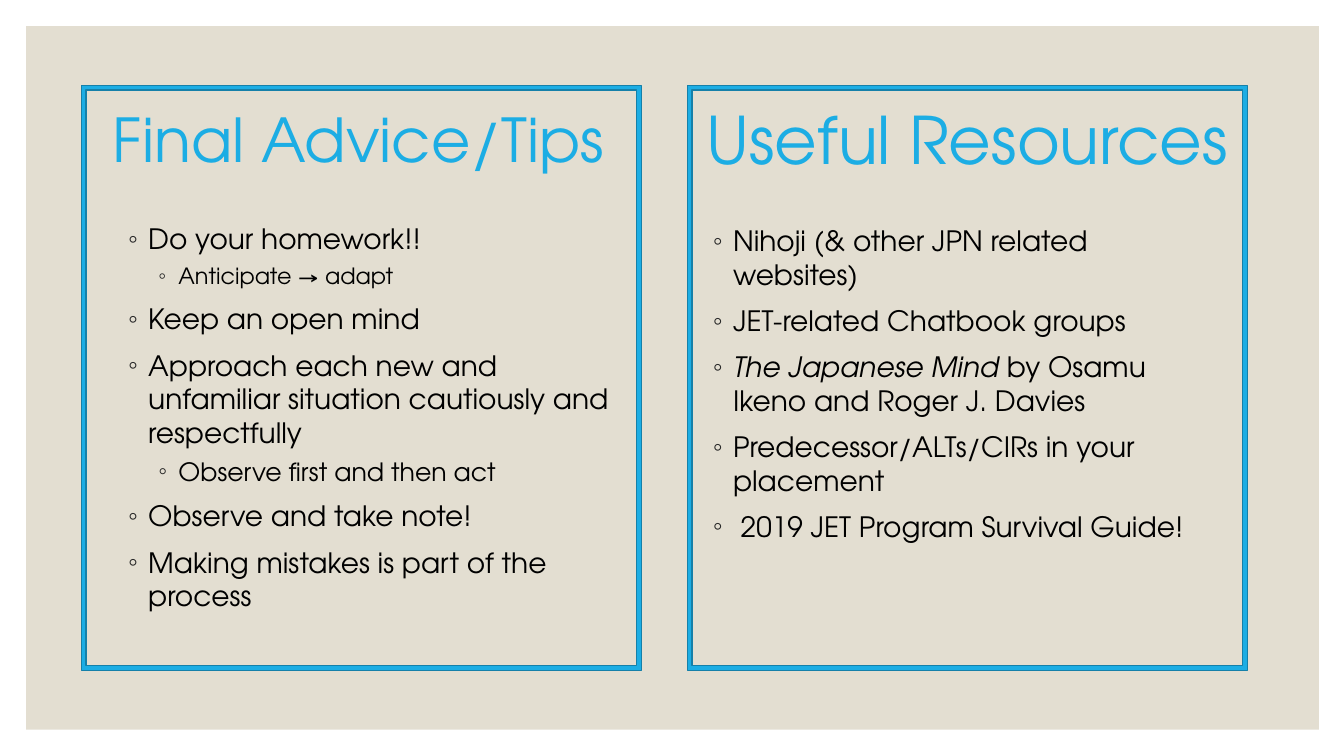
from pptx import Presentation
from pptx import util as u
from pptx.dml.color import RGBColor
from pptx.enum import shapes, text
from pptx.oxml.ns import qn
from lxml import etree

FONT = "TeX Gyre Adventor"
BLUE, EDGE, BEIGE, BLACK, BULLET = "1CADE4", "1580A9", "E3DED1", "000000", "262626"
PANEL_W, PANEL_H = 5.55, 5.8

# Each item: level, size, runs of (words, italic)
ADVICE = [
    (0, 20, [("Do your homework!!", False)]),
    (1, 16, [("Anticipate → adapt", False)]),
    (0, 20, [("Keep an open mind", False)]),
    (0, 20, [("Approach each new and unfamiliar situation cautiously and respectfully", False)]),
    (1, 18, [("Observe first and then act", False)]),
    (0, 20, [("Observe and take note!", False)]),
    (0, 20, [("Making mistakes is part of the process", False)]),
]
RESOURCES = [
    (0, 20, [("Nihoji (& other JPN related websites)", False)]),
    (0, 20, [("JET-related Chatbook groups", False)]),
    (0, 20, [("The Japanese Mind", True), (" by Osamu Ikeno and Roger J. Davies", False)]),
    (0, 20, [("Predecessor/ALTs/CIRs in your placement", False)]),
    (0, 20, [(" 2019 JET Program Survival Guide!", False)]),
]


def rgb(color):
    return RGBColor.from_string(color)


def place(sp, x, y, w, h):
    sp.left, sp.top, sp.width, sp.height = (u.Inches(v) for v in (x, y, w, h))


def style(r, size, color, italic=False):
    r.font.name, r.font.size, r.font.italic = FONT, u.Pt(size), italic
    r.font.color.rgb = rgb(color)


def add_bullet(p, level):
    pPr = p._p.get_or_add_pPr()
    pPr.set("marL", str(u.Inches(0.5 if level else 0.2)))
    pPr.set("indent", str(u.Inches(-0.2)))
    clr = etree.SubElement(pPr, qn("a:buClr"))
    etree.SubElement(clr, qn("a:srgbClr")).set("val", BULLET)
    etree.SubElement(pPr, qn("a:buChar")).set("char", "◦")


def background(s):
    s.background.fill.solid()
    s.background.fill.fore_color.rgb = rgb("FFFFFF")
    sp = s.shapes.add_shape(shapes.MSO_SHAPE.RECTANGLE, *(u.Inches(v) for v in (0.26, 0.26, 12.82, 6.98)))
    sp.shadow.inherit = False
    sp.fill.solid()
    sp.fill.fore_color.rgb = rgb(BEIGE)
    sp.line.fill.background()
    s.shapes._spTree.insert(2, sp._element)  # behind the placeholders


def heading(sp, words, size, x, y):
    place(sp, x, y, 5.5, 1.5)
    tf = sp.text_frame
    tf.word_wrap, tf.auto_size = True, text.MSO_AUTO_SIZE.NONE
    tf.vertical_anchor = text.MSO_ANCHOR.MIDDLE
    tf.text = words
    p = tf.paragraphs[0]
    p.alignment, p.line_spacing = text.PP_ALIGN.LEFT, 0.9
    style(p.runs[0], size, BLUE)


def bullet_list(sp, items, x, y):
    place(sp, x, y, 5.2, 4.1)
    tf = sp.text_frame
    tf.word_wrap, tf.auto_size = True, text.MSO_AUTO_SIZE.NONE
    tf.vertical_anchor = text.MSO_ANCHOR.TOP
    for i, (level, size, runs) in enumerate(items):
        p = tf.add_paragraph() if i else tf.paragraphs[0]
        p.level = level
        add_bullet(p, level)
        p.space_before = u.Pt(0 if i == 0 else 5 if level else 9)
        for words, italic in runs:
            r = p.add_run()
            r.text = words
            style(r, size, BLACK, italic)


def panel(s, x, y, title, words, size, title_dx, body, items, body_dx, body_dy):
    heading(title, words, size, x + title_dx, y - 0.18)
    bullet_list(body, items, x + body_dx, y + body_dy)
    # Border
    sp = s.shapes.add_shape(shapes.MSO_SHAPE.FRAME, *(u.Inches(v) for v in (x, y, PANEL_W, PANEL_H)))
    sp.adjustments[0] = 0.008
    sp.shadow.inherit = False
    sp.fill.solid()
    sp.fill.fore_color.rgb = rgb(BLUE)
    sp.line.color.rgb = rgb(EDGE)
    sp.line.width = u.Pt(1)


def main():
    prs = Presentation()
    prs.slide_width, prs.slide_height = u.Inches(13.33), u.Inches(7.5)
    s = prs.slides.add_slide(prs.slide_layouts[3])
    background(s)
    # Left and right panels
    panel(s, 0.81, 0.85, s.shapes.title, "Final Advice/Tips", 43.2, 0.21,
          s.placeholders[1], ADVICE, 0.36, 1.3)
    second_title = s.shapes.add_textbox(0, 0, 0, 0)
    panel(s, 6.82, 0.85, second_title, "Useful Resources", 46.8, 0.09,
          s.placeholders[2], RESOURCES, 0.15, 1.32)
    prs.save("out.pptx")


if __name__ == "__main__":
    main()
